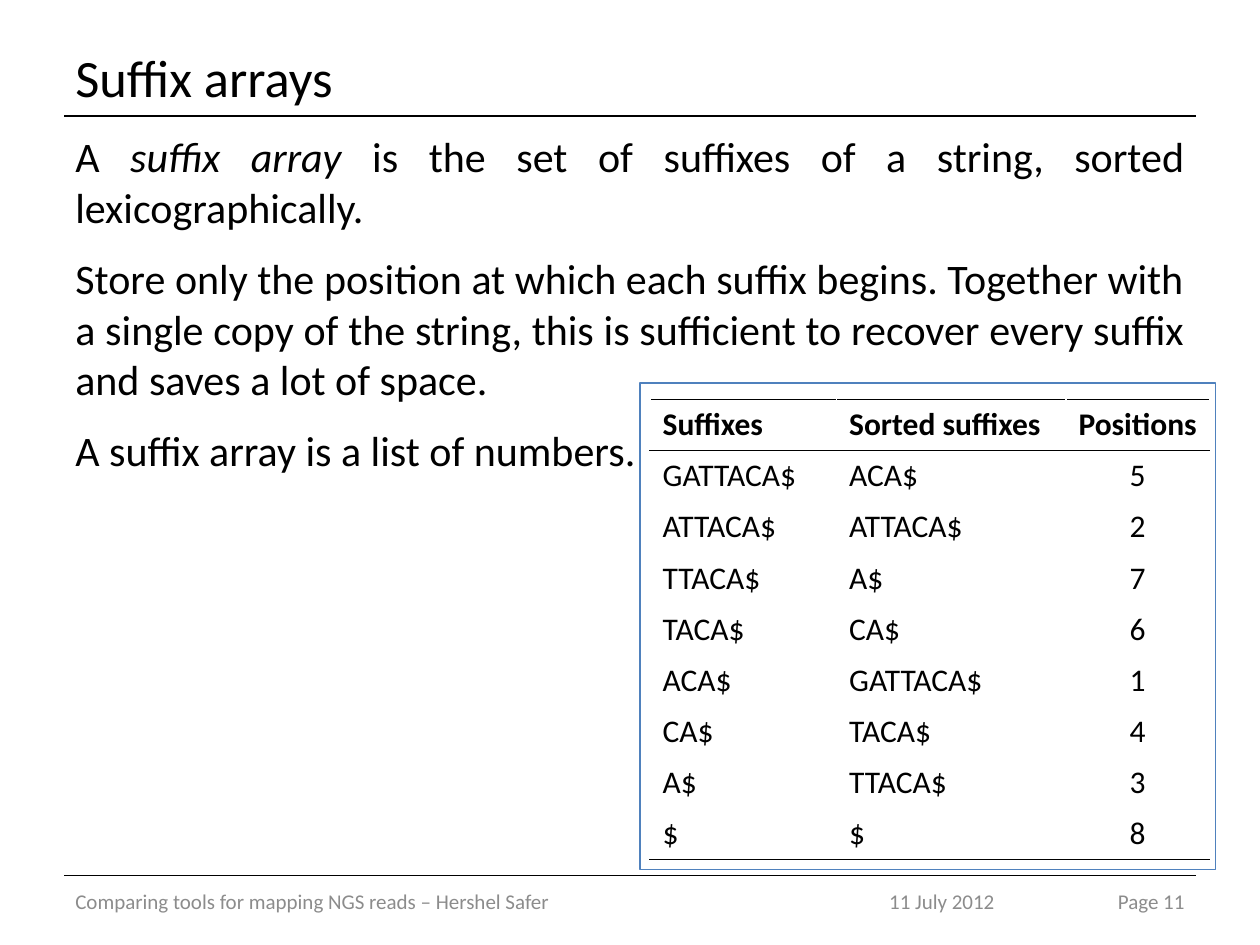
from dataclasses import dataclass
from typing import Any

from lxml.etree import SubElement
from pptx import Presentation
from pptx.dml.color import RGBColor
from pptx.enum.shapes import MSO_CONNECTOR, MSO_SHAPE
from pptx.enum.text import MSO_ANCHOR, PP_ALIGN
from pptx.oxml.ns import qn
from pptx.util import Inches, Pt

COLUMNS, ROWS = 100, 75
LEFT, CENTER, RIGHT, JUSTIFY = PP_ALIGN.LEFT, PP_ALIGN.CENTER, PP_ALIGN.RIGHT, PP_ALIGN.JUSTIFY

BODY = [
    "A *suffix array* is the set of suffixes of a string, sorted lexicographically.",
    "Store only the position at which each suffix begins. Together with a single copy "
    "of the string, this is sufficient to recover every suffix and saves a lot of space.",
    "A suffix array is a list of numbers.",
]
HEADINGS = ["Suffixes", "Sorted suffixes", "Positions"]
WORD = "GATTACA$"
SUFFIXES = [WORD[start:] for start in range(len(WORD))]
SORTED_SUFFIXES = ["ACA$", "ATTACA$", "A$", "CA$", "GATTACA$", "TACA$", "TTACA$", "$"]
POSITIONS = [str(SUFFIXES.index(suffix) + 1) for suffix in SORTED_SUFFIXES]


def color(value):
    """Turn a hex string into a colour."""
    return RGBColor.from_string(value)


def write_text(frame, paragraphs, *, font, size, ink, align=LEFT, bold=False, after=0):
    """Fill a text frame with paragraphs, setting words between asterisks in italics."""
    for index, words in enumerate(paragraphs):
        para = frame.add_paragraph() if index else frame.paragraphs[0]
        para.alignment = align
        para.space_after = Pt(after)
        for order, part in enumerate(words.split("*")):
            span = para.add_run()
            span.text = part
            span.font.name = font
            span.font.size = Pt(size)
            span.font.bold = bold
            span.font.italic = order % 2 == 1
            span.font.color.rgb = color(ink)


@dataclass
class SlideBuilder:
    """Hold the style and the current slide, and add elements by grid position."""

    deck: Any
    page: Any
    font: str = "Calibri"
    ink: str = "000000"
    muted: str = "8C8C8C"
    paper: str = "FFFFFF"
    accent: str = "4F81BD"

    def across(self, columns):
        """Convert grid columns to a length."""
        return round(self.deck.slide_width * columns / COLUMNS)

    def down(self, rows):
        """Convert grid rows to a length."""
        return round(self.deck.slide_height * rows / ROWS)

    def area(self, left, top, width, height):
        """Convert a grid area to lengths."""
        return self.across(left), self.down(top), self.across(width), self.down(height)

    def text(self, area, paragraphs, anchor=MSO_ANCHOR.MIDDLE, **style):
        """Add a wrapping text box."""
        frame = self.page.shapes.add_textbox(*self.area(*area)).text_frame
        frame.word_wrap = True
        frame.vertical_anchor = anchor
        write_text(frame, paragraphs, **{"font": self.font, "ink": self.ink, **style})

    def rule(self, row, start=5.1, end=94.9):
        """Add a horizontal rule."""
        line = self.page.shapes.add_connector(
            MSO_CONNECTOR.STRAIGHT,
            self.across(start), self.down(row), self.across(end), self.down(row),
        )
        line.line.color.rgb = color(self.ink)
        line.line.width = Pt(0.75)
        SubElement(line._element.spPr, qn("a:effectLst"))

    def outline(self, area):
        """Add an unfilled rectangle."""
        box = self.page.shapes.add_shape(MSO_SHAPE.RECTANGLE, *self.area(*area))
        box.shadow.inherit = False
        box.fill.background()
        box.line.color.rgb = color(self.accent)
        box.line.width = Pt(0.75)

    def borders(self, cell, top, bottom):
        """Draw the four borders of a cell, with plain sides."""
        properties = cell._tc.get_or_add_tcPr()
        sides = {"L": self.paper, "R": self.paper, "T": top, "B": bottom}
        for side, value in sides.items():
            edge = SubElement(properties, qn(f"a:ln{side}"), w=str(Pt(1)))
            SubElement(SubElement(edge, qn("a:solidFill")), qn("a:srgbClr"), val=value)

    def table(self, area, widths, records, aligns, size):
        """Add a table ruled above and below its heading and at its foot."""
        grid = self.page.shapes.add_table(len(records), len(widths), *self.area(*area)).table
        grid.first_row = grid.horz_banding = False
        for column, width in zip(grid.columns, widths):
            column.width = self.across(width)
        edges = [self.ink, self.ink] + [self.paper] * (len(records) - 2) + [self.ink]
        for row, record in enumerate(records):
            for column, words in enumerate(record):
                cell = grid.cell(row, column)
                self.borders(cell, edges[row], edges[row + 1])
                cell.fill.background()
                write_text(cell.text_frame, [words], font=self.font, size=size,
                           ink=self.ink, align=aligns[column], bold=row == 0)


def main():
    """Build and save the suffix array slide."""
    deck = Presentation()
    deck.slide_width, deck.slide_height = Inches(10), Inches(7.5)
    slide = SlideBuilder(deck, deck.slides.add_slide(deck.slide_layouts[6]))

    slide.rule(9.2)
    slide.rule(69.5)
    slide.text((5, 3, 90, 6.1), ["Suffix arrays"], size=30)
    slide.text((5, 9.9, 90, 59.1), BODY, MSO_ANCHOR.TOP, size=24, align=JUSTIFY, after=12)

    footer = [
        (5, 60, "Comparing tools for mapping NGS reads – Hershel Safer", LEFT),
        (84.6, 10.4, "Page 11", RIGHT),
        (65.7, 18.1, "11 July 2012", CENTER),
    ]
    for left, width, words, align in footer:
        slide.text((left, 69.5, width, 4), [words], size=12, ink=slide.muted, align=align)

    records = [HEADINGS, *zip(SUFFIXES, SORTED_SUFFIXES, POSITIONS)]
    slide.table((51.6, 31.7, 44.5, 36.5), [14.8, 18.2, 11.4], records,
                [LEFT, LEFT, CENTER], size=18)
    slide.outline((50.8, 30.4, 45.7, 38.6))
    deck.save("out.pptx")


if __name__ == "__main__":
    main()
